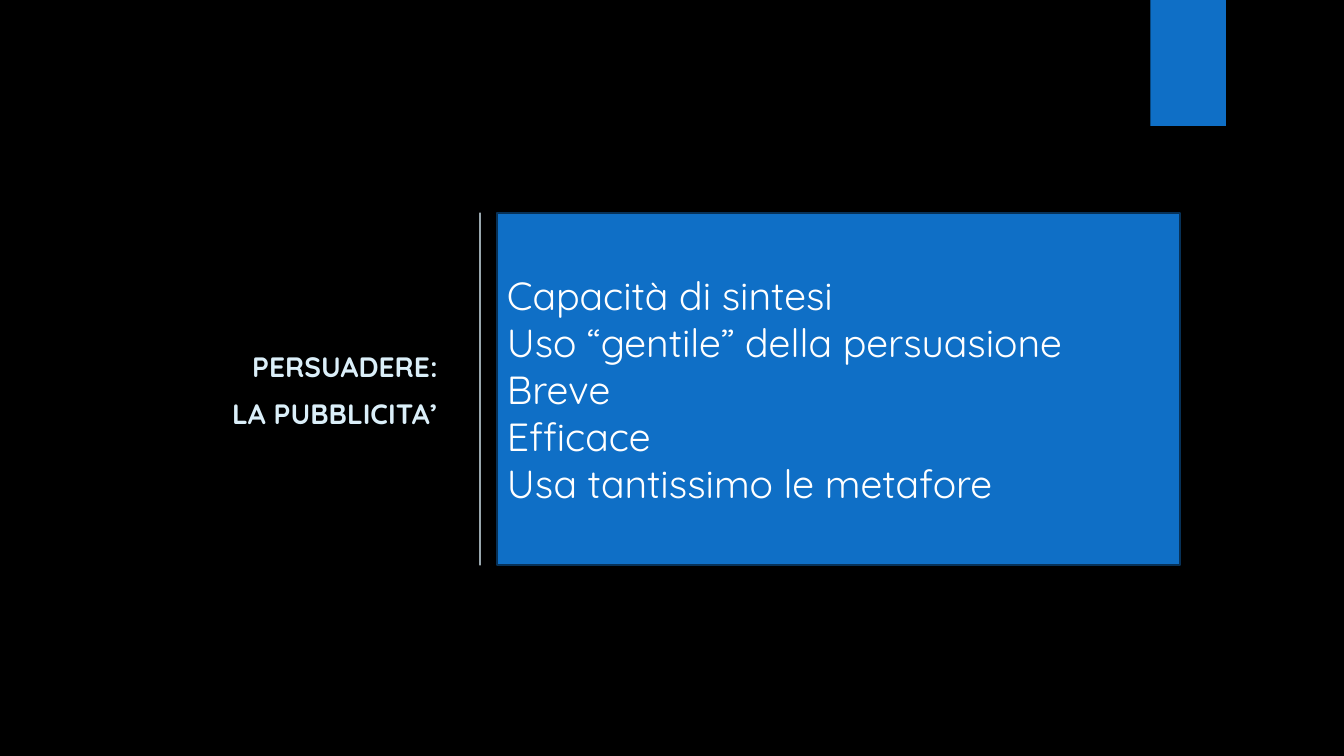
from pptx import Presentation
from pptx.dml.color import RGBColor
from pptx.enum import shapes, text
from pptx.oxml import parse_xml
from pptx.oxml.ns import nsdecls, qn
from pptx.util import Inches, Pt

# Content
TITLE = ["PERSUADERE:", "LA PUBBLICITA’"]
POINTS = [
    "Capacità di sintesi",
    "Uso “gentile” della persuasione",
    "Breve",
    "Efficace",
    "Usa tantissimo le metafore",
]

# Style
FONT = "Quicksand"
BLACK = RGBColor(0x00, 0x00, 0x00)
BLUE = RGBColor(0x0F, 0x6F, 0xC6)
NAVY = RGBColor(0x07, 0x31, 0x57)
PALE = RGBColor(0xDB, 0xEF, 0xF9)
WHITE = RGBColor(0xFF, 0xFF, 0xFF)

# Layout in inches: the divider and the panel share top and height
PANEL_TOP, PANEL_H = 2.11, 3.5
DIVIDER_X = 4.76


def add_block(s, left, top, width, height):
    block = s.shapes.add_shape(
        shapes.MSO_SHAPE.RECTANGLE,
        Inches(left), Inches(top), Inches(width), Inches(height))
    block.shadow.inherit = False
    block.fill.solid()
    block.fill.fore_color.rgb = BLUE
    block.line.fill.background()
    return block


def write_lines(sp, lines, size, color, align, bold=False, gap=0):
    tf = sp.text_frame
    tf.word_wrap = True
    tf.vertical_anchor = text.MSO_ANCHOR.MIDDLE
    for i, line in enumerate(lines):
        p = tf.add_paragraph() if i else tf.paragraphs[0]
        p.alignment = align
        p.space_before = Pt(gap if i else 0)
        r = p.add_run()
        r.text = line
        r.font.name = FONT
        r.font.size = Pt(size)
        r.font.bold = bold
        r.font.color.rgb = color


prs = Presentation()
prs.slide_width, prs.slide_height = Inches(13.33), Inches(7.5)
s = prs.slides.add_slide(prs.slide_layouts[6])
s.background.fill.solid()
s.background.fill.fore_color.rgb = BLACK

# Corner tab
add_block(s, 11.41, 0, 0.75, 1.25)

# Divider, partly transparent
divider = s.shapes.add_connector(
    shapes.MSO_CONNECTOR.STRAIGHT,
    Inches(DIVIDER_X), Inches(PANEL_TOP),
    Inches(DIVIDER_X), Inches(PANEL_TOP + PANEL_H))
divider.line.width = Pt(1.25)
divider.line.color.rgb = PALE
spPr = divider._element.spPr
spPr.find(".//" + qn("a:srgbClr")).append(
    parse_xml(f'<a:alpha {nsdecls("a")} val="70000"/>'))
spPr.append(parse_xml(f'<a:effectLst {nsdecls("a")}/>'))

# Title
title = s.shapes.add_textbox(
    Inches(1.26), Inches(1.39), Inches(3.18), Inches(4.95))
write_lines(title, TITLE, 20, PALE, text.PP_ALIGN.RIGHT, bold=True, gap=10)

# Panel with the points
panel = add_block(s, 4.93, PANEL_TOP, 6.77, PANEL_H)
panel.line.color.rgb = NAVY
panel.line.width = Pt(1.5)
write_lines(panel, POINTS, 28, WHITE, text.PP_ALIGN.LEFT)

prs.save("out.pptx")
